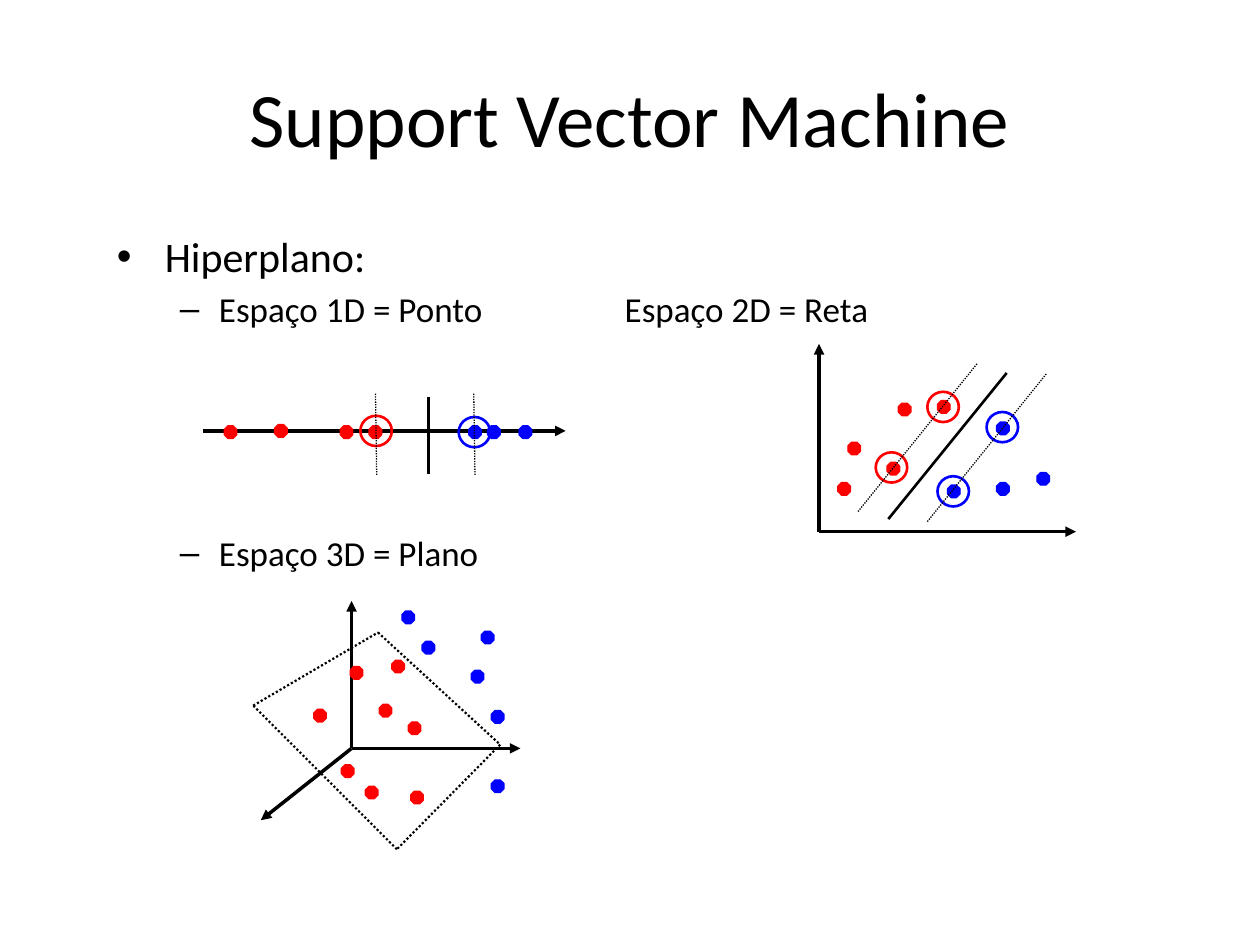
import pptx
import pptx.util
import pptx.dml.color
import pptx.enum.dml
import pptx.enum.shapes
import pptx.enum.text
import pptx.oxml
from pptx.oxml.ns import nsdecls, qn

Inches = pptx.util.Inches
Pt = pptx.util.Pt
SHAPE = pptx.enum.shapes.MSO_SHAPE

FONT = "Calibri"
BLACK, RED, BLUE = "000000", "FF0000", "0000FF"
DOT = 0.1
RING_W, RING_H = 0.25, 0.24


def rgb(color):
    return pptx.dml.color.RGBColor.from_string(color)


def add_xml(parent, xml):
    tag, rest = xml.split(" ", 1)
    parent.append(pptx.oxml.parse_xml(f"<{tag} {nsdecls('a')} {rest}"))


def set_font(p, size):
    p.font.name = FONT
    p.font.size = Pt(size)
    p.font.color.rgb = rgb(BLACK)


def add_title(s, text):
    sp = s.shapes.title
    sp.left, sp.top = Inches(0.5), Inches(0.3)
    sp.width, sp.height = Inches(9), Inches(1.25)
    tf = sp.text_frame
    tf.text = text
    tf.vertical_anchor = pptx.enum.text.MSO_ANCHOR.MIDDLE
    p = tf.paragraphs[0]
    p.alignment = pptx.enum.text.PP_ALIGN.CENTER
    set_font(p, 44)


def add_bullet(p, text, char, size, margin, indent, before=0, level=0, tab=None):
    p.text = text
    p.level = level
    p.space_before = Pt(before)
    pPr = p._p.get_or_add_pPr()
    pPr.set("marL", str(Inches(margin)))
    pPr.set("indent", str(Inches(-indent)))
    add_xml(pPr, '<a:buFont typeface="Arial"/>'.removeprefix("<"))
    add_xml(pPr, f'a:buChar char="{char}"/>')
    if tab:
        add_xml(pPr, f'a:tabLst ><a:tab pos="{Inches(tab)}" algn="l"/></a:tabLst>')
    set_font(p, size)


def add_body(s):
    box = s.shapes.add_textbox(Inches(0.83), Inches(1.78), Inches(8.27), Inches(4.49))
    tf = box.text_frame
    tf.word_wrap = True
    add_bullet(tf.paragraphs[0], "Hiperplano:", "•", 24, 0.38, 0.38)
    sub = dict(char="–", size=20, margin=0.81, indent=0.31, level=1)
    add_bullet(tf.add_paragraph(), "Espaço 1D = Ponto\tEspaço 2D = Reta",
               before=4, tab=4.03, **sub)
    # The wide space leaves room for the 1D and 2D diagrams.
    add_bullet(tf.add_paragraph(), "Espaço 3D = Plano", before=115, **sub)


def add_line(group, start, end, width, dotted=False, arrow=False):
    cx = group.shapes.add_connector(pptx.enum.shapes.MSO_CONNECTOR.STRAIGHT,
                                    *map(Inches, start + end))
    cx.line.color.rgb = rgb(BLACK)
    cx.line.width = Pt(width)
    if dotted:
        cx.line.dash_style = pptx.enum.dml.MSO_LINE.ROUND_DOT
    if arrow:
        add_xml(cx.line._get_or_add_ln(), 'a:tailEnd type="triangle"/>')
    add_xml(cx._element.find(qn("p:spPr")), "a:effectLst />")


def add_axis(group, start, end):
    add_line(group, start, end, 2, arrow=True)


def add_marker(group, kind, left, top, width, height, color, line_width):
    sp = group.shapes.add_shape(kind, *map(Inches, (left, top, width, height)))
    sp.shadow.inherit = False
    sp.line.color.rgb = rgb(color)
    sp.line.width = Pt(line_width)
    return sp


def add_points(group, color, corners):
    for left, top in corners:
        sp = add_marker(group, SHAPE.OCTAGON, left, top, DOT, DOT, color, 0.75)
        sp.fill.solid()
        sp.fill.fore_color.rgb = rgb(color)


def add_rings(group, color, corners):
    """Circle the support vectors."""
    for left, top in corners:
        sp = add_marker(group, SHAPE.OVAL, left, top, RING_W, RING_H, color, 1.5)
        sp.fill.background()


def draw_1d(s):
    g = s.shapes.add_group_shape()
    add_axis(g, (1.61, 3.42), (4.49, 3.42))
    add_points(g, RED, [(1.78, 3.38), (2.18, 3.37), (2.7, 3.38), (2.93, 3.38)])
    add_points(g, BLUE, [(3.72, 3.38), (3.87, 3.38), (4.12, 3.38)])
    add_line(g, (3.4, 3.15), (3.4, 3.76), 1.5)
    add_rings(g, BLUE, [(3.64, 3.31)])
    add_rings(g, RED, [(2.86, 3.3)])
    for x in (2.98, 3.76):
        add_line(g, (x + 0.01, 3.77), (x, 3.12), 0.75, dotted=True)


def draw_2d(s):
    g = s.shapes.add_group_shape()
    origin = (6.5, 4.22)
    add_axis(g, origin, (8.54, 4.22))
    add_axis(g, origin, (6.5, 2.73))
    add_points(g, RED, [(7.44, 3.18), (6.65, 3.83), (6.73, 3.51),
                        (7.13, 3.2), (7.04, 3.67)])
    add_points(g, BLUE, [(7.91, 3.83), (8.23, 3.75), (7.52, 3.85), (7.91, 3.35)])
    add_rings(g, RED, [(6.95, 3.59), (7.36, 3.11)])
    add_rings(g, BLUE, [(7.44, 3.78), (7.83, 3.27)])
    for x, y in ((6.81, 4.06), (7.36, 4.14)):
        add_line(g, (x, y), (x + 0.95, y - 1.18), 0.75, dotted=True)
    add_line(g, (7.99, 2.96), (7.05, 4.12), 1.5)


def draw_3d(s):
    g = s.shapes.add_group_shape()
    origin = (2.79, 5.94)
    for end in ((2.79, 4.77), (4.13, 5.94), (2.07, 6.51)):
        add_axis(g, origin, end)
    add_points(g, RED, [(3.11, 5.24), (2.49, 5.63), (2.9, 6.24), (2.78, 5.29),
                        (3.01, 5.59), (3.26, 6.28), (3.24, 5.73), (2.71, 6.07)])
    add_points(g, BLUE, [(3.9, 5.64), (3.82, 5.01), (3.74, 5.32),
                         (3.9, 6.19), (3.19, 4.85), (3.35, 5.09)])
    plane = [(3, 5.02), (3.97, 5.91), (3.15, 6.74), (2.01, 5.6)]
    for start, end in zip(plane, plane[1:] + plane[:1]):
        add_line(g, start, end, 1.25, dotted=True)


def main():
    prs = pptx.Presentation()
    prs.slide_width, prs.slide_height = Inches(10), Inches(7.5)
    s = prs.slides.add_slide(prs.slide_layouts[5])
    add_title(s, "Support Vector Machine")
    add_body(s)
    draw_1d(s)
    draw_2d(s)
    draw_3d(s)
    prs.save("out.pptx")


if __name__ == "__main__":
    main()
